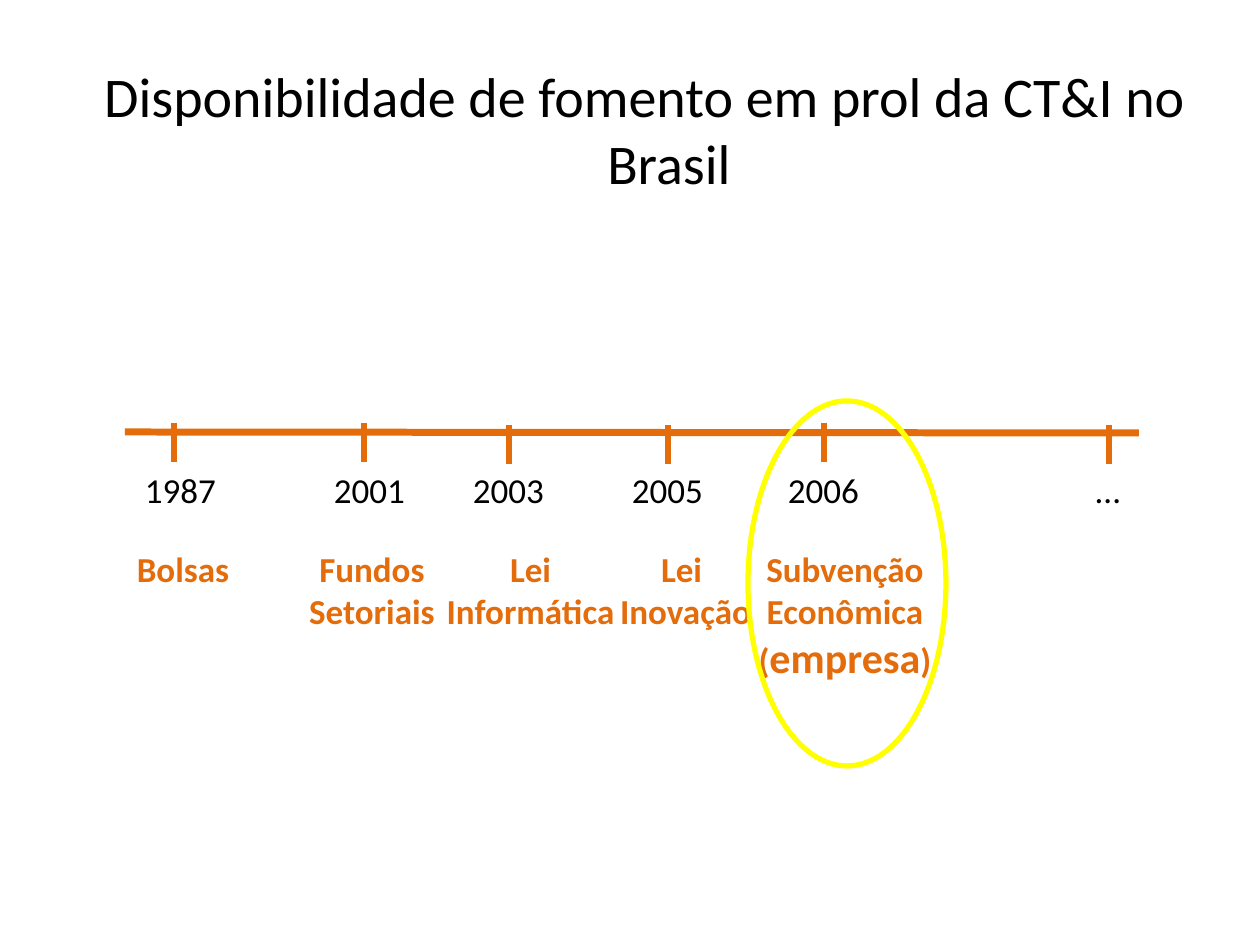
from lxml import etree
from pptx import Presentation
from pptx import util as u
from pptx.dml.color import RGBColor
from pptx.enum import shapes, text
from pptx.oxml.ns import qn

PX = 914400 // 126
COLORS = {"black": "000000", "orange": "E46C0A", "yellow": "FFFF00", "white": "FFFFFF"}
FONT = "Calibri"
AXIS_Y = 433
TICK_HEIGHT = 39
YEAR_TOP = 462
NAME_TOP = 541

# tick x, tick top, year, year centre, year width
TICKS = [
    (174, 423, "1987", 180, 97),
    (364, 423, "2001", 369, 97),
    (509, 425, "2003", 508, 97),
    (668, 425, "2005", 667, 97),
    (824, 423, "2006", 823, 97),
    (1109, 425, "...", 1108, 52),
]
# centre, width, height, lines; a line is a list of (text, size)
PROGRAMS = [
    (183, 118, 55, [[("Bolsas", 20)]]),
    (372, 152, 97, [[("Fundos", 20)], [("Setoriais", 20)]]),
    (530, 195, 97, [[("Lei", 20)], [("Informática", 20)]]),
    (685, 157, 97, [[("Lei ", 20)], [("Inovação", 20)]]),
    (845, 200, 149, [[("Subvenção", 20)], [("Econômica", 20)],
                     [("(", 20), ("empresa", 24), (")", 20)]]),
]


def px(value):
    return u.Emu(value * PX)


def rgb(name):
    return RGBColor.from_string(COLORS[name])


def add_text(slide, lines, left, top, width, height, *, color="black", bold=False,
             wrap=False, hanging=0, space_before=0):
    """Add centred lines, each a list of (text, size) runs."""
    box = slide.shapes.add_textbox(px(left), px(top), px(width), px(height))
    frame = box.text_frame
    frame.word_wrap = wrap
    if not wrap:
        frame.auto_size = text.MSO_AUTO_SIZE.SHAPE_TO_FIT_TEXT
    for index, runs in enumerate(lines):
        paragraph = frame.paragraphs[0] if index == 0 else frame.add_paragraph()
        paragraph.alignment = text.PP_ALIGN.CENTER
        paragraph.space_before = u.Pt(space_before)
        if hanging:
            properties = paragraph._p.get_or_add_pPr()
            properties.set("marL", str(px(hanging)))
            properties.set("indent", str(-px(hanging)))
        for content, size in runs:
            run = paragraph.add_run()
            run.text = content
            run.font.name = FONT
            run.font.size = u.Pt(size)
            run.font.bold = bold
            run.font.color.rgb = rgb(color)


def add_line(slide, x1, y1, x2, y2, width):
    line = slide.shapes.add_connector(
        shapes.MSO_CONNECTOR.STRAIGHT, px(x1), px(y1), px(x2), px(y2))
    line.line.color.rgb = rgb("orange")
    line.line.width = u.Pt(width)
    etree.SubElement(line._element.spPr, qn("a:effectLst"))


def add_highlight(slide, left, top, width, height):
    ellipse = slide.shapes.add_shape(
        shapes.MSO_SHAPE.OVAL, px(left), px(top), px(width), px(height))
    ellipse.shadow.inherit = False
    ellipse.fill.background()
    ellipse.line.color.rgb = rgb("yellow")
    ellipse.line.width = u.Pt(3)


def add_timeline(slide):
    add_line(slide, 125, AXIS_Y - 1, 1139, AXIS_Y, 4)
    for x, top, year, center, width in TICKS:
        add_line(slide, x, top, x, top + TICK_HEIGHT, 3)
        add_text(slide, [[(year, 20)]], center - width // 2, YEAR_TOP, width, 55)
    for center, width, height, lines in PROGRAMS:
        add_text(slide, lines, center - width // 2, NAME_TOP, width, height,
                 color="orange", bold=True)


def main():
    presentation = Presentation()
    presentation.slide_width = u.Inches(10)
    presentation.slide_height = u.Inches(7.5)
    slide = presentation.slides.add_slide(presentation.slide_layouts[6])
    slide.background.fill.solid()
    slide.background.fill.fore_color.rgb = rgb("white")

    add_text(slide, [[("Disponibilidade de fomento em prol da CT&I no Brasil", 32)]],
             74, 55, 1142, 139, wrap=True, hanging=48, space_before=6.4)
    add_timeline(slide)
    add_highlight(slide, 748, 383 + 18, 198, 387 - 22)
    presentation.save("out.pptx")


if __name__ == "__main__":
    main()
